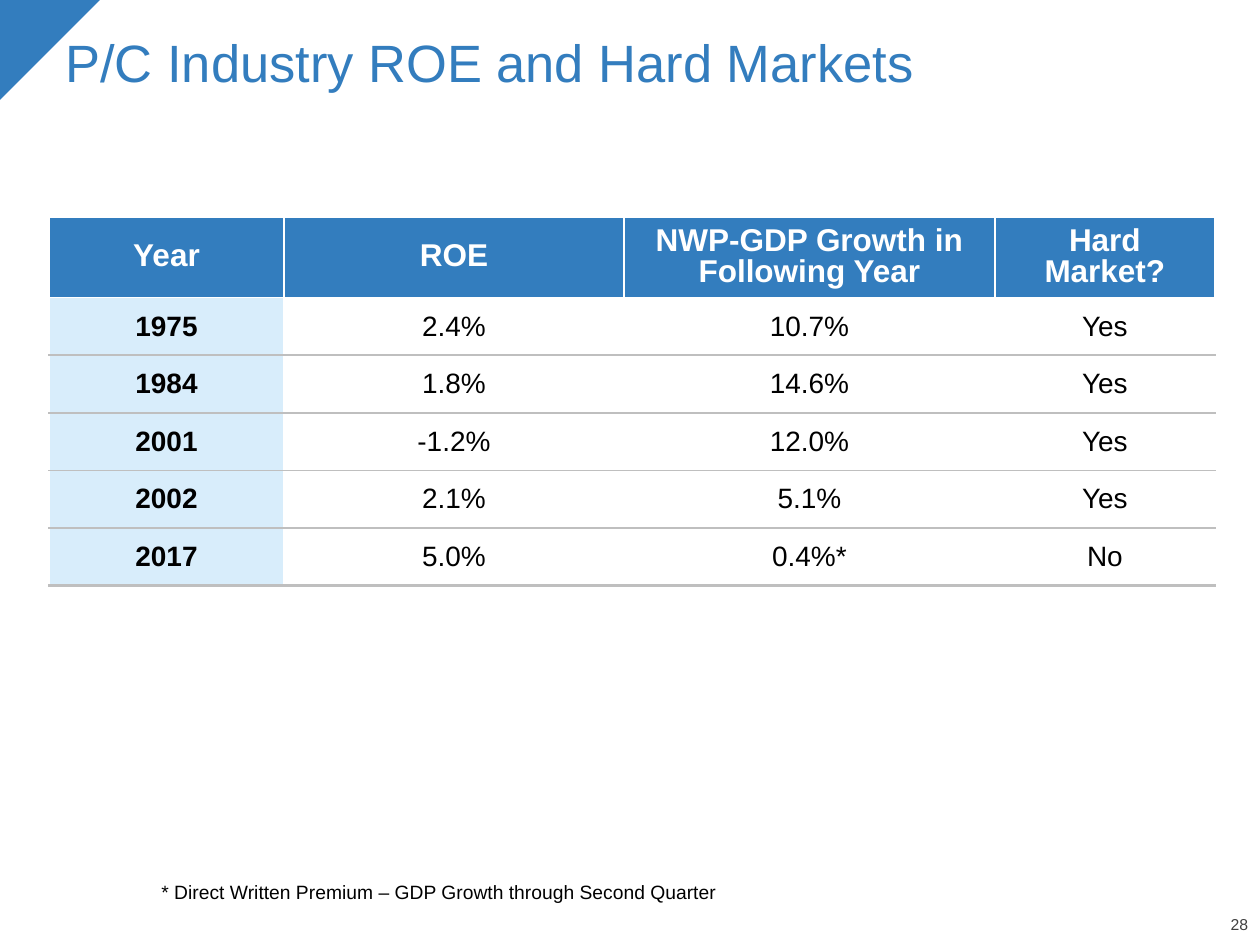
from lxml import etree
from pptx import Presentation
from pptx import util as u
from pptx.dml.color import RGBColor
from pptx.enum import shapes, text
from pptx.oxml.ns import qn

BLUE = RGBColor(0x33, 0x7D, 0xBE)
PALE = RGBColor(0xD8, 0xED, 0xFB)
RULE = RGBColor(0xBF, 0xBF, 0xBF)
GREY = RGBColor(0x40, 0x40, 0x40)
WHITE = RGBColor(0xFF, 0xFF, 0xFF)
BLACK = RGBColor(0, 0, 0)

ROWS = [
    ("Year", "ROE", "NWP-GDP Growth in Following Year", "Hard Market?"),
    ("1975", "2.4%", "10.7%", "Yes"),
    ("1984", "1.8%", "14.6%", "Yes"),
    ("2001", "-1.2%", "12.0%", "Yes"),
    ("2002", "2.1%", "5.1%", "Yes"),
    ("2017", "5.0%", "0.4%*", "No"),
]
WIDTHS = (235, 340, 371, 220)
HEADER_HEIGHT, ROW_HEIGHT = 76, 56
ALIGN = text.PP_ALIGN
ANCHOR = text.MSO_ANCHOR


def px(length):
    return u.Emu(round(length * 914400 / 126))


class SlideBuilder:
    font = "Arial"

    def __init__(self, slide):
        self.slide = slide

    def style(self, para, size, color, bold=False, align=ALIGN.LEFT, spacing=0.9):
        para.alignment = align
        para.line_spacing = spacing
        for span in para.runs:
            span.font.name = self.font
            span.font.size = u.Pt(size)
            span.font.bold = bold
            span.font.color.rgb = color

    def corner(self, left, top, side):
        triangle = self.slide.shapes.add_shape(
            shapes.MSO_SHAPE.RIGHT_TRIANGLE, px(left), px(top), px(side), px(side))
        triangle.rotation = 90
        triangle.shadow.inherit = False
        triangle.fill.solid()
        triangle.fill.fore_color.rgb = BLUE
        triangle.line.fill.background()

    def label(self, words, left, top, width, height, size, color,
              align=ALIGN.LEFT, anchor=ANCHOR.TOP, inset=True):
        box = self.slide.shapes.add_textbox(px(left), px(top), px(width), px(height))
        frame = box.text_frame
        frame.word_wrap = True
        frame.vertical_anchor = anchor
        if not inset:
            frame.margin_left = frame.margin_right = 0
            frame.margin_top = frame.margin_bottom = 0
        frame.text = words
        self.style(frame.paragraphs[0], size, color, align=align)

    def border(self, cell, sides):
        props = cell._tc.get_or_add_tcPr()
        for place, side in enumerate(s for s in ("lnL", "lnR", "lnT", "lnB") if s in sides):
            color, width = sides[side]
            line = etree.Element(qn(f"a:{side}"), w=str(u.Pt(width)))
            fill = etree.SubElement(line, qn("a:solidFill"))
            etree.SubElement(fill, qn("a:srgbClr"), val=str(color))
            props.insert(place, line)

    def header_cell(self, cell, column):
        self.style(cell.text_frame.paragraphs[0], 18, WHITE, True, ALIGN.CENTER)
        cell.fill.solid()
        cell.fill.fore_color.rgb = BLUE
        sides = {}
        if column > 0:
            sides["lnL"] = (WHITE, 1.5)
        if column < len(WIDTHS) - 1:
            sides["lnR"] = (WHITE, 1.5)
        self.border(cell, sides)

    def body_cell(self, cell, column, first, last):
        is_year = column == 0
        self.style(cell.text_frame.paragraphs[0], 16, BLACK, is_year, ALIGN.CENTER, 1.0)
        cell.margin_top = cell.margin_bottom = px(12)
        if is_year:
            cell.fill.solid()
            cell.fill.fore_color.rgb = PALE
        else:
            cell.fill.background()
        sides = {"lnB": (RULE, 2.25 if last else 1)}
        if not first:
            sides["lnT"] = (RULE, 1)
        self.border(cell, sides)

    def table(self, rows, left, top):
        heights = [HEADER_HEIGHT] + [ROW_HEIGHT] * (len(rows) - 1)
        table = self.slide.shapes.add_table(
            len(rows), len(WIDTHS), px(left), px(top),
            px(sum(WIDTHS)), px(sum(heights))).table
        table.horz_banding = False
        for column, width in zip(table.columns, WIDTHS):
            column.width = px(width)
        for r, (values, height) in enumerate(zip(rows, heights)):
            table.rows[r].height = px(height)
            for c, value in enumerate(values):
                cell = table.cell(r, c)
                cell.text_frame.text = value
                cell.vertical_anchor = ANCHOR.MIDDLE
                if r == 0:
                    self.header_cell(cell, c)
                else:
                    self.body_cell(cell, c, r == 1, r == len(rows) - 1)


def main():
    deck = Presentation()
    deck.slide_width, deck.slide_height = px(1260), px(945)
    page = SlideBuilder(deck.slides.add_slide(deck.slide_layouts[6]))
    page.corner(-1, 0, 101)
    page.label("28", 1188, 918, 60, 16, 9, GREY, ALIGN.RIGHT, ANCHOR.BOTTOM, inset=False)
    page.label("P/C Industry ROE and Hard Markets", 53, 31, 1166, 131, 30, BLUE)
    page.table(ROWS, 49, 217)
    page.label("* Direct Written Premium – GDP Growth through Second Quarter",
               149, 877, 767, 37, 11, BLACK)
    deck.save("out.pptx")


if __name__ == "__main__":
    main()
